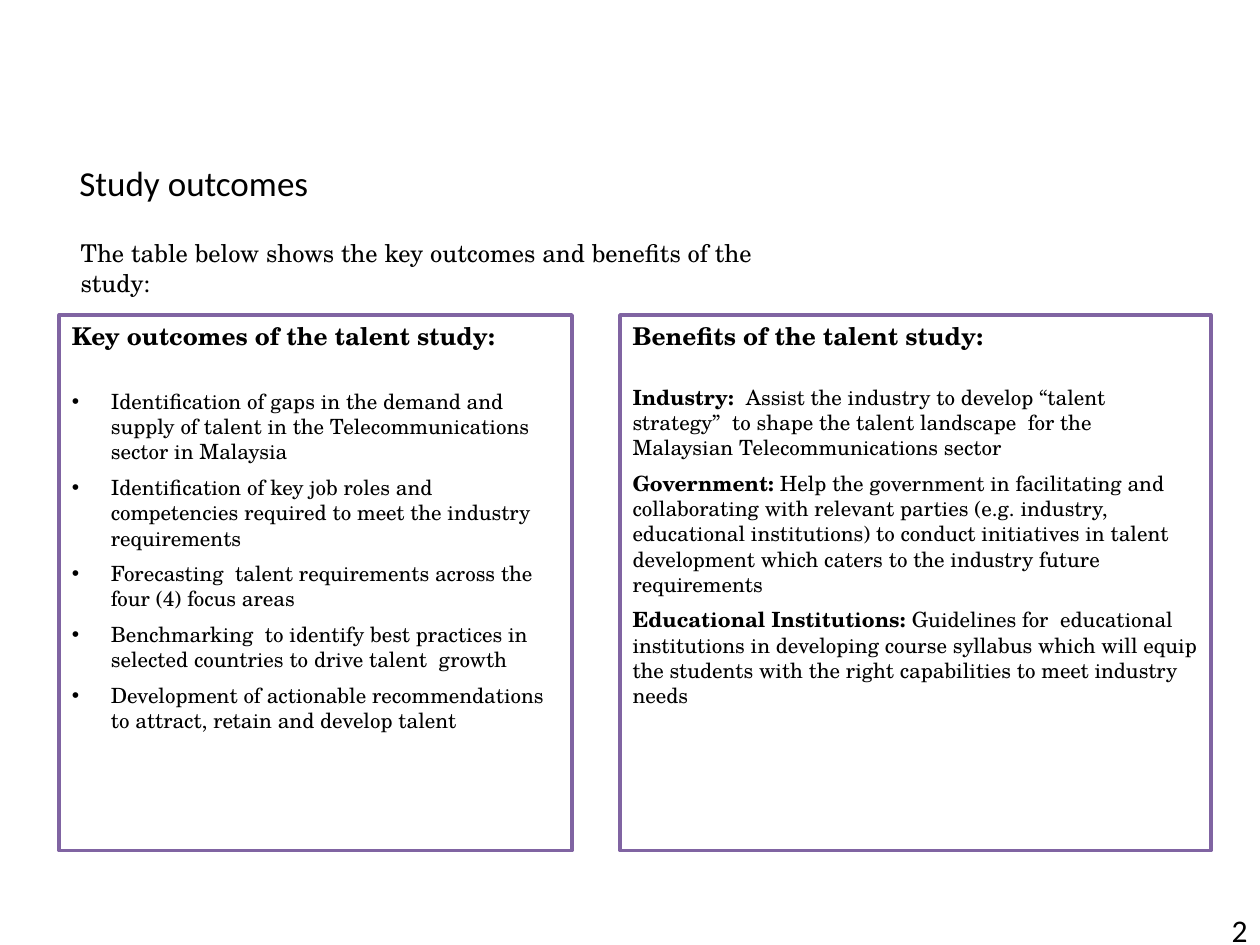
from dataclasses import dataclass

from lxml import etree
from pptx import Presentation
from pptx.dml.color import RGBColor
from pptx.enum import text as t
from pptx.oxml.ns import qn
from pptx.util import Inches, Pt

SERIF = "TeX Gyre Schola"
SANS = "Calibri"
BLACK = "000000"
PURPLE = "8064A2"


@dataclass
class Item:
    text: str
    lead: str = ""


@dataclass
class Panel:
    head: str
    left: float
    width: float
    gap: float
    items: list[Item]
    bullet: bool = False


PANELS = [
    Panel("Key outcomes of the talent study:", 0.47, 4.07, 21.6, [
        Item("Identification of gaps in the demand and supply of talent in the "
             "Telecommunications sector in Malaysia"),
        Item("Identification of key job roles and competencies required to meet "
             "the industry requirements"),
        Item("Forecasting  talent requirements across the four (4) focus areas"),
        Item("Benchmarking  to identify best practices in selected countries to "
             "drive talent  growth"),
        Item("Development of actionable recommendations to attract, retain and "
             "develop talent"),
    ], bullet=True),
    Panel("Benefits of the talent study:", 4.92, 4.69, 19.2, [
        Item("Assist the industry to develop “talent strategy”  to shape the talent "
             "landscape  for the Malaysian Telecommunications sector", "Industry:  "),
        Item("Help the government in facilitating and collaborating with relevant "
             "parties (e.g. industry, educational institutions) to conduct "
             "initiatives in talent development which caters to the industry "
             "future requirements", "Government: "),
        Item("Guidelines for  educational institutions in developing course "
             "syllabus which will equip the students with the right capabilities "
             "to meet industry needs", "Educational Institutions: "),
    ]),
]


def color(code: str) -> RGBColor:
    return RGBColor.from_string(code)


def place(shape, left: float, top: float, width: float, height: float) -> None:
    shape.left, shape.top = Inches(left), Inches(top)
    shape.width, shape.height = Inches(width), Inches(height)


def add_run(para, words: str, size: float, face: str = SERIF, bold: bool = False) -> None:
    run = para.add_run()
    run.text = words
    run.font.size = Pt(size)
    run.font.name = face
    run.font.bold = bold
    run.font.color.rgb = color(BLACK)


def set_mark(para, bullet: bool) -> None:
    props = para._p.get_or_add_pPr()
    dent = Inches(0.31) if bullet else 0
    props.set("marL", str(dent))
    props.set("indent", str(-dent))
    if bullet:
        etree.SubElement(props, qn("a:buChar")).set("char", "•")
    else:
        etree.SubElement(props, qn("a:buNone"))


def add_label(slide, words: str, box: tuple, size: float, face: str):
    label = slide.shapes.add_textbox(*(Inches(n) for n in box))
    frame = label.text_frame
    frame.word_wrap = True
    add_run(frame.paragraphs[0], words, size, face)
    return frame


def draw_panel(shape, panel: Panel) -> None:
    place(shape, panel.left, 2.5, panel.width, 4.25)
    shape.fill.background()
    shape.line.color.rgb = color(PURPLE)
    shape.line.width = Pt(2)
    frame = shape.text_frame
    frame.auto_size = t.MSO_AUTO_SIZE.NONE
    head = frame.paragraphs[0]
    set_mark(head, False)
    head.space_before, head.space_after = Pt(0), Pt(panel.gap)
    add_run(head, panel.head, 14, bold=True)
    for item in panel.items:
        para = frame.add_paragraph()
        set_mark(para, panel.bullet)
        para.space_before, para.space_after = Pt(0), Pt(6)
        if item.lead:
            add_run(para, item.lead, 12, bold=True)
        add_run(para, item.text, 12)


def main() -> None:
    deck = Presentation()
    deck.slide_width, deck.slide_height = Inches(10), Inches(7.5)
    slide = deck.slides.add_slide(deck.slide_layouts[3])

    title = slide.shapes.title
    place(title, 0.53, 1.16, 2.19, 0.57)
    frame = title.text_frame
    frame.auto_size = t.MSO_AUTO_SIZE.NONE
    frame.vertical_anchor = t.MSO_ANCHOR.MIDDLE
    frame.paragraphs[0].alignment = t.PP_ALIGN.LEFT
    add_run(frame.paragraphs[0], "Study outcomes", 20, SANS)

    for slot, panel in zip((1, 2), PANELS):
        draw_panel(slide.placeholders[slot], panel)

    intro = add_label(
        slide, "The table below shows the key outcomes and benefits of the study:",
        (0.64, 1.89, 5.89, 0.27), 14, SERIF)
    intro.margin_left = intro.margin_right = 0
    intro.margin_top = intro.margin_bottom = 0

    page = add_label(slide, "2", (7.67, 7.18, 2.33, 0.4), 18, SANS)
    page.paragraphs[0].alignment = t.PP_ALIGN.RIGHT

    deck.save("out.pptx")


if __name__ == "__main__":
    main()
